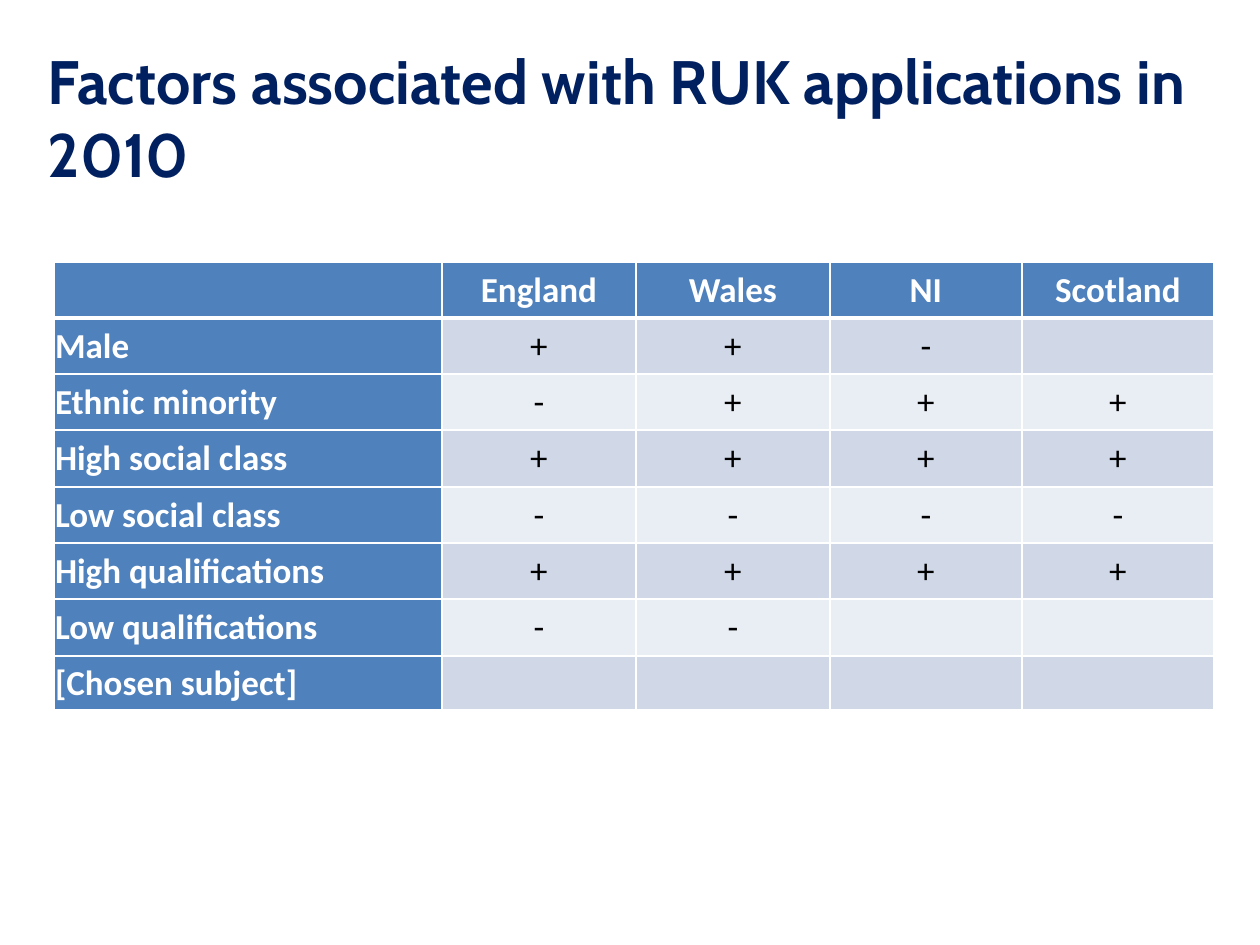
from lxml.etree import SubElement as Sub
from pptx import Presentation as Deck
from pptx.dml.color import RGBColor as Rgb
from pptx.enum.text import MSO_ANCHOR as Anchor, MSO_AUTO_SIZE as Auto, PP_ALIGN as Align
from pptx.oxml.ns import qn
from pptx.util import Emu, Pt

SCALE = 914400 / 126
HUES = {"navy": "002060", "blue": "4F81BD", "dark": "D0D8E8",
        "light": "E9EDF4", "white": "FFFFFF", "black": "000000"}
HEADS = ["", "England", "Wales", "NI", "Scotland"]
ROWS = [
    ["Male", "+", "+", "-", ""],
    ["Ethnic minority", "-", "+", "+", "+"],
    ["High social class", "+", "+", "+", "+"],
    ["Low social class", "-", "-", "-", "-"],
    ["High qualifications", "+", "+", "+", "+"],
    ["Low qualifications", "-", "-", "", ""],
    ["[Chosen subject]", "", "", "", ""],
]
WIDTHS = [388, 194, 194, 192, 192]
TALLS = [56, 56, 56, 57, 56, 56, 57, 54]


def px(num):
    return Emu(round(num * SCALE))


class Pen:
    def __init__(self, slide):
        self.slide = slide

    def text(self, frame, words, face, size, hue, bold, align):
        para = frame.paragraphs[0]
        para.alignment = align
        run = para.add_run()
        run.text = words
        font = run.font
        font.name, font.size, font.bold = face, Pt(size), bold
        font.color.rgb = Rgb.from_string(HUES[hue])

    def title(self, words, box):
        shape = self.slide.shapes.title
        shape.left, shape.top, shape.width, shape.height = map(px, box)
        frame = shape.text_frame
        frame.word_wrap = True
        frame.auto_size = Auto.NONE
        frame.vertical_anchor = Anchor.MIDDLE
        self.text(frame, words, "Cabin", 35, "navy", True, Align.LEFT)

    def edge(self, cell, side, width):
        props = cell._tc.get_or_add_tcPr()
        line = Sub(props, qn(f"a:ln{side}"), w=str(Pt(width)))
        fill = Sub(line, qn("a:solidFill"))
        Sub(fill, qn("a:srgbClr"), val=HUES["white"])

    def cell(self, cell, words, row, col):
        thick = {"T": 3 if row == 1 else 1, "B": 3 if row == 0 else 1}
        for side in "LRTB":
            self.edge(cell, side, thick.get(side, 1))
        head = row == 0 or col == 0
        hue = "blue" if head else "dark" if row % 2 else "light"
        cell.fill.solid()
        cell.fill.fore_color.rgb = Rgb.from_string(HUES[hue])
        cell.margin_left = cell.margin_right = cell.margin_top = px(1)
        cell.margin_bottom = 0
        cell.vertical_anchor = Anchor.MIDDLE
        if words:
            align = Align.CENTER if col else Align.LEFT
            ink = "white" if head else "black"
            self.text(cell.text_frame, words, "Calibri", 20, ink, head, align)

    def table(self, data, left, top, widths, talls):
        box = map(px, (left, top, sum(widths), sum(talls)))
        grid = self.slide.shapes.add_table(len(data), len(widths), *box).table
        for col, width in zip(grid.columns, widths):
            col.width = px(width)
        for row, tall in zip(grid.rows, talls):
            row.height = px(tall)
        for r, line in enumerate(data):
            for c, words in enumerate(line):
                self.cell(grid.cell(r, c), words, r, c)


def main():
    deck = Deck()
    deck.slide_width, deck.slide_height = px(1260), px(945)
    pen = Pen(deck.slides.add_slide(deck.slide_layouts[5]))
    pen.title("Factors associated with RUK applications in 2010", (35, 38, 1201, 157))
    pen.table([HEADS] + ROWS, 54, 262, WIDTHS, TALLS)
    deck.save("out.pptx")


if __name__ == "__main__":
    main()
